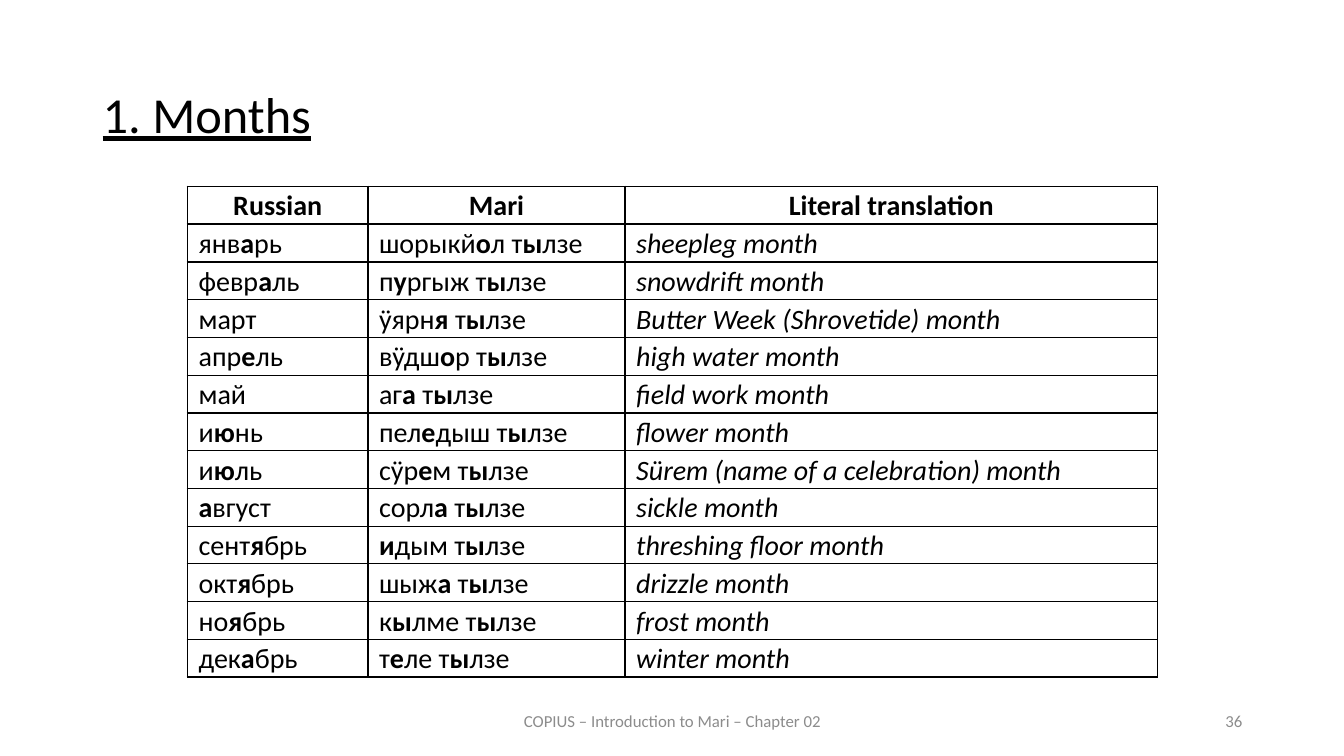
"""Build the slide listing month names in Russian and Mari."""
from lxml import etree
from pptx import Presentation
from pptx import util as u
from pptx.dml.color import RGBColor
from pptx.enum import text
from pptx.oxml import ns

BLACK = RGBColor(0, 0, 0)
GRAY = RGBColor(0x8C, 0x8C, 0x8C)
FONT = "Calibri"
STRESS = "*"

TITLE = "1. Months"
FOOTER = "COPIUS – Introduction to Mari – Chapter 02"
PAGE = "36"
HEADS = ("Russian", "Mari", "Literal translation")
MONTHS = [
    ("янв*а*рь", "шорыкй*о*л т*ы*лзе", "sheepleg month"),
    ("февр*а*ль", "п*у*ргыж т*ы*лзе", "snowdrift month"),
    ("март", "ӱярн*я *т*ы*лзе", "Butter Week (Shrovetide) month"),
    ("апр*е*ль", "вӱдш*о*р т*ы*лзе", "high water month"),
    ("май", "аг*а* т*ы*лзе", "field work month"),
    ("и*ю*нь", "пел*е*дыш т*ы*лзе", "flower month"),
    ("и*ю*ль", "сӱр*е*м т*ы*лзе", "Sürem (name of a celebration) month"),
    ("*а*вгуст", "сорл*а* т*ы*лзе", "sickle month"),
    ("сент*я*брь", "*и*дым т*ы*лзе", "threshing floor month"),
    ("окт*я*брь", "шыж*а* т*ы*лзе", "drizzle month"),
    ("но*я*брь", "к*ы*лме т*ы*лзе", "frost month"),
    ("дек*а*брь", "т*е*ле т*ы*лзе", "winter month"),
]
COLS = (1.79, 2.55, 5.28)
LEFT, TOP, HIGH = 1.86, 1.85, 4.87
THICK, THIN = 1.5, 1
ALIGN = text.PP_ALIGN


def add_run(par, words, size, color=BLACK):
    run = par.add_run()
    run.text = words
    run.font.name = FONT
    run.font.size = u.Pt(size)
    run.font.color.rgb = color
    return run


def add_box(slide, place, words, size, color, align):
    frame = slide.shapes.add_textbox(*map(u.Inches, place)).text_frame
    frame.word_wrap = True
    frame.vertical_anchor = text.MSO_ANCHOR.MIDDLE
    par = frame.paragraphs[0]
    par.alignment = align
    return add_run(par, words, size, color)


def add_edges(cell, top, base):
    props = cell._tc.get_or_add_tcPr()
    for side, width in zip("LRTB", (THICK, THICK, top, base)):
        line = etree.SubElement(props, ns.qn(f"a:ln{side}"), w=str(u.Pt(width)))
        fill = etree.SubElement(line, ns.qn("a:solidFill"))
        etree.SubElement(fill, ns.qn("a:srgbClr"), val=str(BLACK))


def fill_cell(cell, words, head, slant):
    cell.fill.background()
    cell.vertical_anchor = text.MSO_ANCHOR.MIDDLE
    cell.margin_left = cell.margin_right = u.Inches(0.11)
    cell.margin_top, cell.margin_bottom = u.Inches(0.02), 0
    par = cell.text_frame.paragraphs[0]
    par.alignment = ALIGN.CENTER if head else ALIGN.JUSTIFY
    for i, part in enumerate(words.split(STRESS)):
        if part:
            font = add_run(par, part, 20).font
            font.bold = head or i % 2 == 1
            font.italic = slant


def add_months(slide):
    rows = [HEADS, *MONTHS]
    last = len(rows) - 1
    place = map(u.Inches, (LEFT, TOP, sum(COLS), HIGH))
    table = slide.shapes.add_table(len(rows), len(COLS), *place).table
    table.first_row = table.horz_banding = False
    for col, width in zip(table.columns, COLS):
        col.width = u.Inches(width)
    for r, row in enumerate(rows):
        table.rows[r].height = u.Inches(HIGH / len(rows))
        for c, words in enumerate(row):
            cell = table.cell(r, c)
            add_edges(cell, THICK if r < 2 else THIN, THICK if r in (0, last) else THIN)
            fill_cell(cell, words, r == 0, r > 0 and c == 2)


def main():
    deck = Presentation()
    deck.slide_width, deck.slide_height = u.Inches(13.33), u.Inches(7.5)
    slide = deck.slides.add_slide(deck.slide_layouts[6])
    title = add_box(slide, (0.92, 0.4, 11.5, 1.45), TITLE, 36, BLACK, ALIGN.JUSTIFY)
    title.font.underline = True
    add_box(slide, (4.42, 6.95, 4.5, 0.4), FOOTER, 12, GRAY, ALIGN.CENTER)
    add_box(slide, (9.42, 6.95, 3, 0.4), PAGE, 12, GRAY, ALIGN.RIGHT)
    add_months(slide)
    deck.save("out.pptx")


if __name__ == "__main__":
    main()
